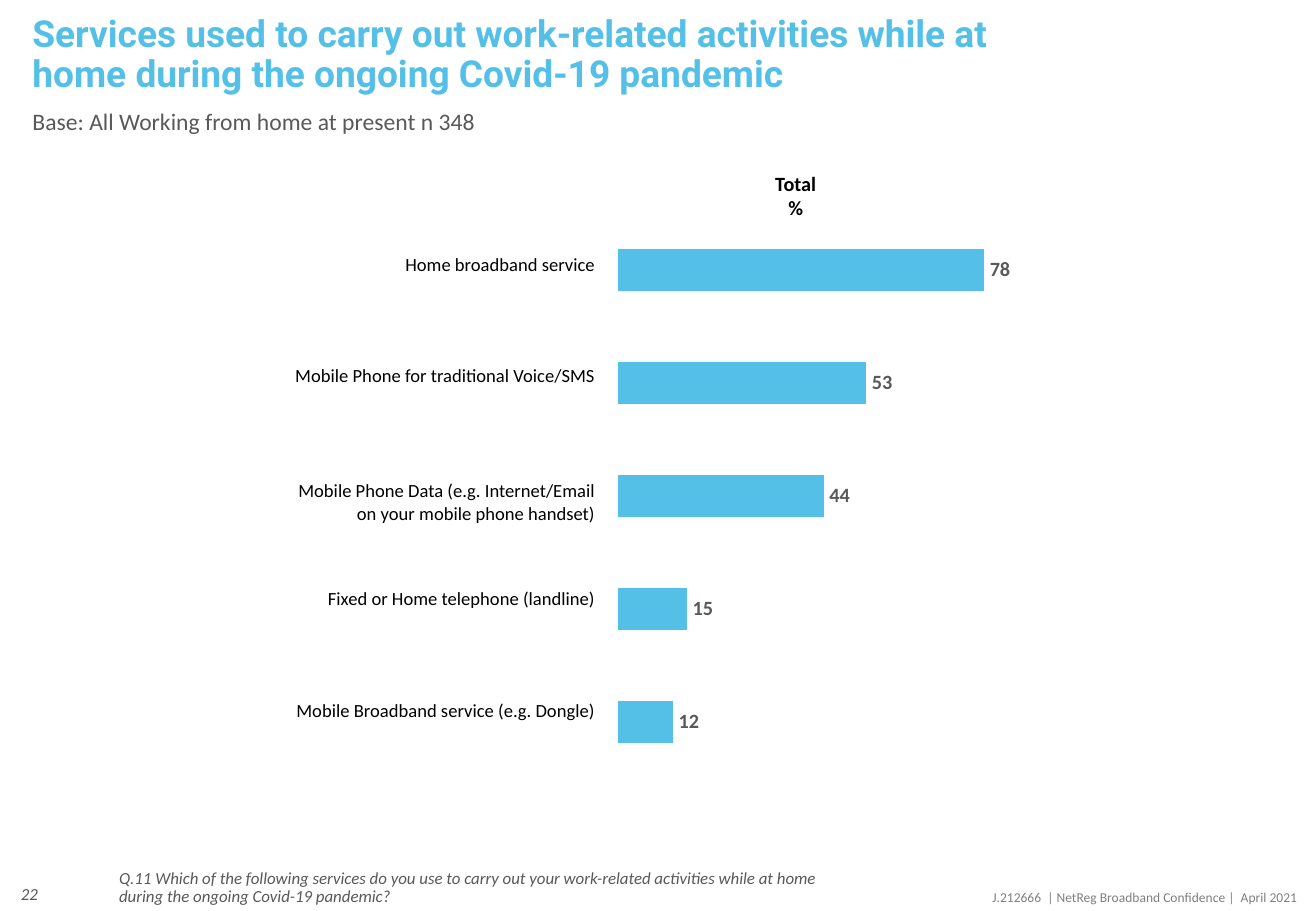
from lxml import etree
from pptx import Presentation
from pptx import util as u
from pptx.chart import data as cd
from pptx.dml.color import RGBColor
from pptx.enum import chart as ch, text as tx
from pptx.oxml import ns

SKY = RGBColor(0x54, 0xC0, 0xE8)
DARK = RGBColor(0x59, 0x59, 0x59)
GREY = RGBColor(0x80, 0x80, 0x80)
BLACK = RGBColor(0, 0, 0)
WHITE = RGBColor(0xFF, 0xFF, 0xFF)
LEFT, MID, RIGHT = tx.PP_ALIGN.LEFT, tx.PP_ALIGN.CENTER, tx.PP_ALIGN.RIGHT

USES = [
    ("Home broadband service", 78),
    ("Mobile Phone for traditional Voice/SMS", 53),
    ("Mobile Phone Data (e.g. Internet/Email on your mobile phone handset)", 44),
    ("Fixed or Home telephone (landline)", 15),
    ("Mobile Broadband service (e.g. Dongle)", 12),
]
ROW = 0.5
TALL = {2: 1.32, 5: 1.4, 6: 0.97, 8: 0.79, 11: 1.35}


def style(font, size, color, bold=False, italic=False, name="Calibri"):
    font.name = name
    font.size = u.Pt(size)
    font.bold = bold
    font.italic = italic
    font.color.rgb = color


def add_text(slide, box, words, size, color, align=LEFT, space=1.0,
             anchor=tx.MSO_ANCHOR.TOP, **look):
    frame = slide.shapes.add_textbox(*map(u.Cm, box)).text_frame
    frame.word_wrap = True
    frame.vertical_anchor = anchor
    frame.text = words
    for para in frame.paragraphs:
        para.alignment = align
        para.line_spacing = space
        for run in para.runs:
            style(run.font, size, color, **look)


def set_plot(chart, **sides):
    area = chart._chartSpace.chart.plotArea
    for old in area.findall(ns.qn("c:layout")):
        area.remove(old)
    layout = etree.Element(ns.qn("c:layout"))
    manual = etree.SubElement(layout, ns.qn("c:manualLayout"))
    parts = {"layoutTarget": "inner", "xMode": "edge", "yMode": "edge", **sides}
    for tag, value in parts.items():
        etree.SubElement(manual, ns.qn("c:" + tag)).set("val", str(value))
    area.insert(0, layout)


def add_bars(slide, box):
    data = cd.CategoryChartData()
    values = [None] * (2 * len(USES) - 1)
    values[::2] = [value for _, value in USES]
    data.categories = [str(n + 1) for n in range(len(values))]
    data.add_series("Series 1", values)
    chart = slide.shapes.add_chart(
        ch.XL_CHART_TYPE.BAR_CLUSTERED, *map(u.Cm, box), data).chart
    chart.has_legend = False
    chart.has_title = False
    style(chart.font, 18, BLACK)
    chart.category_axis.reverse_order = True
    chart.category_axis.visible = False
    axis = chart.value_axis
    axis.minimum_scale, axis.maximum_scale = 0, 90
    axis.has_major_gridlines = False
    axis.visible = False
    set_plot(chart, x=0.484, y=0, w=0.479, h=0.988)

    plot = chart.plots[0]
    plot.gap_width = 30
    plot.vary_by_categories = False
    bars = plot.series[0]
    bars.format.fill.solid()
    bars.format.fill.fore_color.rgb = SKY
    bars.format.line.color.rgb = WHITE
    bars.format.line.width = u.Pt(0.75)
    labels = bars.data_labels
    labels.show_value = True
    labels.position = ch.XL_LABEL_POSITION.OUTSIDE_END
    style(labels.font, 12, DARK, bold=True)


def add_names(slide, left, top, width):
    count = 3 * len(USES) - 2
    highs = [TALL.get(n, ROW) for n in range(count)]
    table = slide.shapes.add_table(
        count, 1, *map(u.Cm, (left, top, width, sum(highs)))).table
    table.first_row = False
    table.horz_banding = False
    for n, high in enumerate(highs):
        table.rows[n].height = u.Cm(high)
        cell = table.cell(n, 0)
        cell.fill.background()
        cell.margin_left = cell.margin_right = cell.margin_top = u.Cm(0.03)
        cell.margin_bottom = 0
        para = cell.text_frame.paragraphs[0]
        if n % 3:
            para._p.get_or_add_endParaRPr().set("sz", "1100")
        else:
            para.text = USES[n // 3][0]
            para.alignment = RIGHT
            style(para.runs[0].font, 11, BLACK)


def main():
    deck = Presentation()
    deck.slide_width, deck.slide_height = u.Cm(27.51), u.Cm(19.05)
    slide = deck.slides.add_slide(deck.slide_layouts[6])

    add_text(slide, (20.17, 18.47, 7.21, 0.6),
             "J.212666  | NetReg Broadband Confidence |  April 2021",
             8, GREY, RIGHT)
    add_text(slide, (0, 18.19, 1.04, 1.02), "22", 10, DARK, RIGHT,
             anchor=tx.MSO_ANCHOR.MIDDLE, italic=True)
    add_text(slide, (0.43, 2.18, 15.42, 0.89),
             "Base: All Working from home at present n 348", 14, DARK, space=0.9)
    add_text(slide, (0.43, 0.2, 22.1, 1.04),
             "Services used to carry out work-related activities while at home "
             "during the ongoing Covid-19 pandemic",
             22, SKY, space=0.9, bold=True, name="Roboto")
    add_text(slide, (2.24, 18.06, 15.49, 0.79),
             "Q.11 Which of the following services do you use to carry out your "
             "work-related activities while at home during the ongoing Covid-19 "
             "pandemic?", 10, DARK, space=0.9, italic=True)
    add_bars(slide, (3.94, 5.05, 18.52, 10.77))
    add_text(slide, (15.57, 3.45, 2.13, 1.27), "Total\n%", 12, BLACK, MID,
             bold=True)
    add_names(slide, 5.79, 5.28, 6.68)
    deck.save("out.pptx")


if __name__ == "__main__":
    main()
